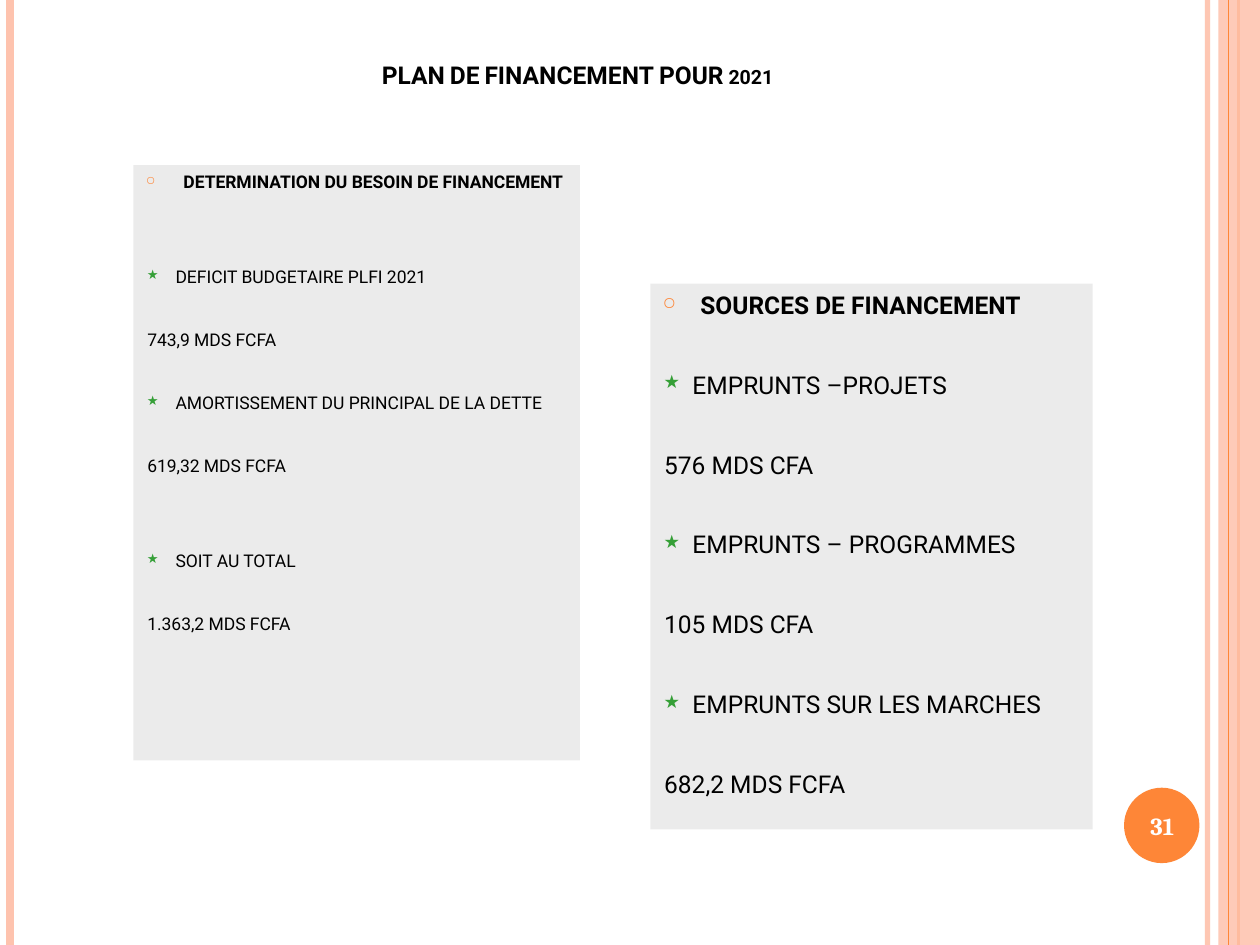
from lxml.etree import SubElement
from pptx import Presentation
from pptx.dml.color import RGBColor
from pptx.enum.shapes import MSO_CONNECTOR, MSO_SHAPE
from pptx.enum.text import MSO_ANCHOR, PP_ALIGN
from pptx.oxml.ns import qn
from pptx.util import Cm, Pt

PEACH = RGBColor(0xFE, 0xC3, 0xAE)
ORANGE = RGBColor(0xFE, 0x86, 0x37)
GREEN = RGBColor(0x35, 0x9F, 0x37)
GREY = RGBColor(0xD9, 0xD9, 0xD9)
BLACK = RGBColor(0, 0, 0)
WHITE = RGBColor(0xFF, 0xFF, 0xFF)

SLIDE_WIDTH, SLIDE_HEIGHT = Cm(25.4), Cm(19.05)
SPACE_BEFORE = 6

# Paragraph styles: left margin, first-line indent, bullet (character, colour, size %)
STYLES = {
    "heading": (Cm(0.76), Cm(-0.76), ("○", ORANGE, 70)),
    "item": (Cm(0.6), Cm(-0.58), ("★", GREEN, 75)),
    "amount": (Cm(0.03), Cm(0), None),
}

# Each line: style, skipped lines above, wording
NEEDS = [
    ("heading", 0, "DETERMINATION DU BESOIN DE FINANCEMENT"),
    ("item", 2, "DEFICIT BUDGETAIRE PLFI 2021"),
    ("amount", 1, "743,9 MDS FCFA"),
    ("item", 1, "AMORTISSEMENT DU PRINCIPAL DE LA DETTE"),
    ("amount", 1, "619,32 MDS FCFA"),
    ("item", 2, "SOIT AU TOTAL"),
    ("amount", 1, "1.363,2 MDS FCFA"),
]
SOURCES = [
    ("heading", 0, "SOURCES DE FINANCEMENT"),
    ("item", 1, "EMPRUNTS –PROJETS"),
    ("amount", 1, "576 MDS CFA"),
    ("item", 1, "EMPRUNTS – PROGRAMMES"),
    ("amount", 1, "105 MDS CFA"),
    ("item", 1, "EMPRUNTS SUR LES MARCHES"),
    ("amount", 1, "682,2 MDS FCFA"),
]


def set_opacity(properties, percent):
    color = next(properties.iter(qn("a:srgbClr")))
    SubElement(color, qn("a:alpha"), val=str(percent * 1000))


def add_stripe(slide, x, color, width, opacity=100):
    stripe = slide.shapes.add_connector(MSO_CONNECTOR.STRAIGHT, x, 0, x, SLIDE_HEIGHT)
    stripe.line.color.rgb = color
    stripe.line.width = Pt(width)
    properties = stripe._element.spPr
    SubElement(properties, qn("a:effectLst"))
    if opacity < 100:
        set_opacity(properties, opacity)


def add_filled(slide, preset, box, color, opacity=100):
    shape = slide.shapes.add_shape(preset, *box)
    shape.shadow.inherit = False
    shape.fill.solid()
    shape.fill.fore_color.rgb = color
    shape.line.fill.background()
    if opacity < 100:
        set_opacity(shape._element.spPr, opacity)
    return shape


def format_runs(paragraph, font, size, color, bold):
    for run in paragraph.runs:
        run.font.name = font
        run.font.size = Pt(size)
        run.font.color.rgb = color
        run.font.bold = bold


def add_label(slide, box, text, font, color, anchor):
    frame = slide.shapes.add_textbox(*box).text_frame
    frame.word_wrap = True
    frame.vertical_anchor = anchor
    frame.text = text
    paragraph = frame.paragraphs[0]
    paragraph.alignment = PP_ALIGN.CENTER
    format_runs(paragraph, font, 14, color, True)
    return paragraph


def set_bullet(properties, char, color, percent):
    bullet_color = SubElement(properties, qn("a:buClr"))
    SubElement(bullet_color, qn("a:srgbClr"), val=str(color))
    SubElement(properties, qn("a:buSzPct"), val=str(percent * 1000))
    SubElement(properties, qn("a:buChar"), char=char)


def add_panel(slide, box, lines, size, pitch):
    panel = add_filled(slide, MSO_SHAPE.RECTANGLE, box, GREY, 50)
    frame = panel.text_frame
    frame.word_wrap = True
    frame.vertical_anchor = MSO_ANCHOR.TOP
    frame.text = "\n".join(text for _, _, text in lines)
    for paragraph, (style, skipped, _) in zip(frame.paragraphs, lines):
        margin, indent, bullet = STYLES[style]
        paragraph.alignment = PP_ALIGN.JUSTIFY
        paragraph.space_before = Pt(SPACE_BEFORE + skipped * pitch)
        properties = paragraph._p.get_or_add_pPr()
        properties.set("marL", str(margin))
        properties.set("indent", str(indent))
        if bullet:
            set_bullet(properties, *bullet)
        format_runs(paragraph, "Roboto", size, BLACK, style == "heading")


def main():
    deck = Presentation()
    deck.slide_width, deck.slide_height = SLIDE_WIDTH, SLIDE_HEIGHT
    slide = deck.slides.add_slide(deck.slide_layouts[6])

    # Side stripes
    add_stripe(slide, Cm(24.34), PEACH, 3, 93)
    add_stripe(slide, Cm(0.21), PEACH, 4.5)
    add_stripe(slide, Cm(24.97), ORANGE, 1.5)
    band = (Cm(24.56), 0, Cm(0.84), SLIDE_HEIGHT)
    add_filled(slide, MSO_SHAPE.RECTANGLE, band, PEACH, 87)
    add_stripe(slide, Cm(24.77), ORANGE, 0.75)

    # Page number
    disc = (Cm(22.66), Cm(15.88), Cm(1.52), Cm(1.52))
    add_filled(slide, MSO_SHAPE.OVAL, disc, ORANGE)
    number_box = (Cm(22.58), Cm(15.93), Cm(1.7), Cm(1.45))
    add_label(slide, number_box, "31", "Cambria", WHITE, MSO_ANCHOR.MIDDLE)

    # Title in small capitals
    title_box = (Cm(1.27), Cm(0.76), Cm(20.75), Cm(1.17))
    title = add_label(slide, title_box, "PLAN DE FINANCEMENT POUR 2021",
                      "Roboto", BLACK, MSO_ANCHOR.BOTTOM)
    title.runs[0]._r.get_or_add_rPr().set("cap", "small")

    # Financing needs and sources
    add_panel(slide, (Cm(2.69), Cm(3.33), Cm(9), Cm(12)), NEEDS, 10, 18)
    add_panel(slide, (Cm(13.11), Cm(5.72), Cm(8.92), Cm(11)), SOURCES, 14, 22.8)

    deck.save("out.pptx")


if __name__ == "__main__":
    main()
